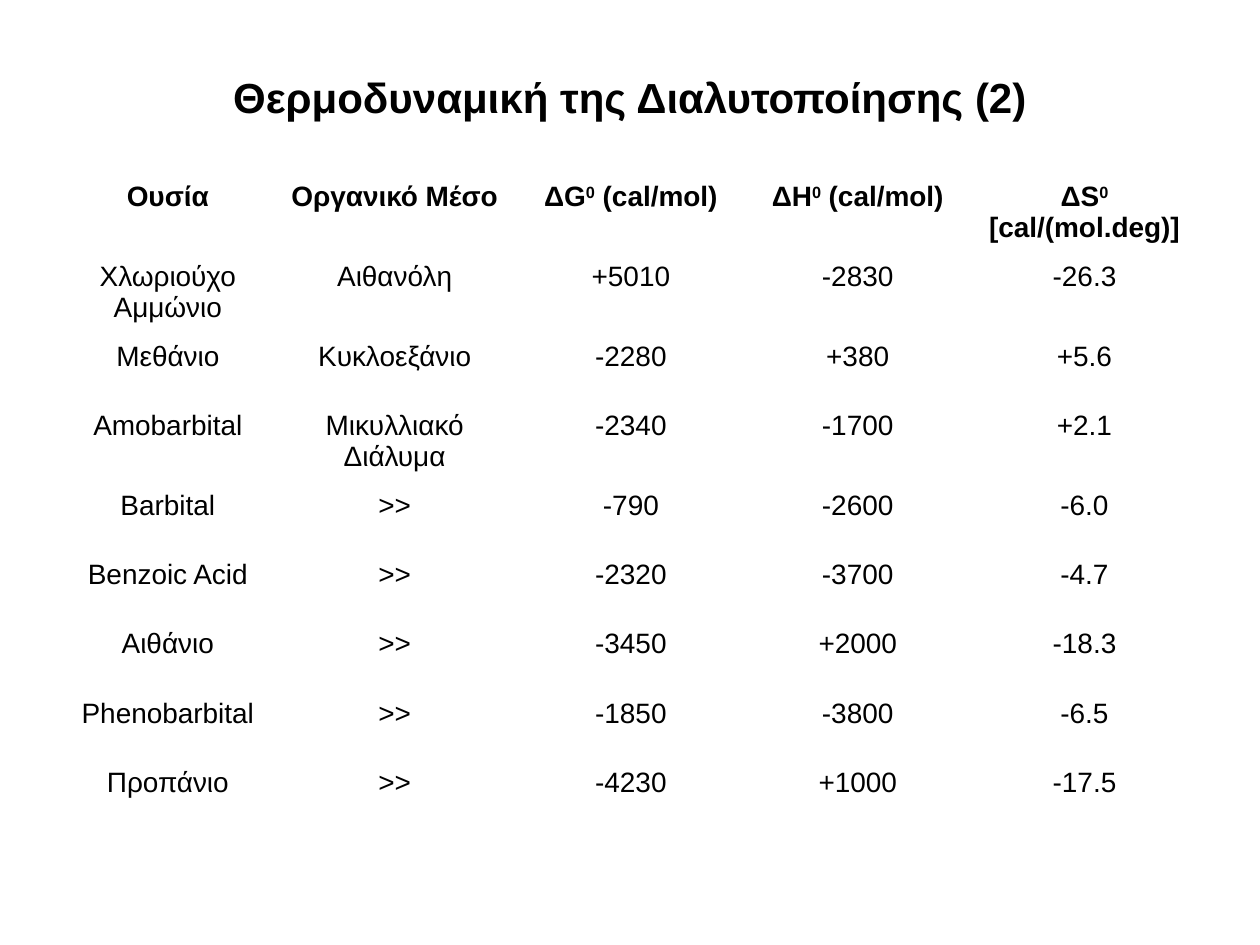
from pptx import Presentation
from pptx.dml.color import RGBColor
from pptx.enum.text import MSO_ANCHOR, PP_ALIGN
from pptx.util import Pt

BLACK = RGBColor(0, 0, 0)
FONT = "Arial"
COL_WIDTHS = [118.8, 140.4, 129.6, 129.6, 129.6]
ROW_HEIGHT = 39.6
HEADERS = [
    ["Ουσία"],
    ["Οργανικό Μέσο"],
    ["ΔG", "0", " (cal/mol)"],
    ["ΔH", "0", " (cal/mol)"],
    ["ΔS", "0", " [cal/(mol.deg)]"],
]
DATA = [
    ["Χλωριούχο Αμμώνιο", "Αιθανόλη", "+5010", "-2830", "-26.3"],
    ["Μεθάνιο", "Κυκλοεξάνιο", "-2280", "+380", "+5.6"],
    ["Amobarbital", "Μικυλλιακό Διάλυμα", "-2340", "-1700", "+2.1"],
    ["Barbital", ">>", "-790", "-2600", "-6.0"],
    ["Benzoic Acid", ">>", "-2320", "-3700", "-4.7"],
    ["Αιθάνιο", ">>", "-3450", "+2000", "-18.3"],
    ["Phenobarbital", ">>", "-1850", "-3800", "-6.5"],
    ["Προπάνιο", ">>", "-4230", "+1000", "-17.5"],
]


def style(p, size, bold):
    p.alignment = PP_ALIGN.CENTER
    p.font.name = FONT
    p.font.size = Pt(size)
    p.font.bold = bold
    p.font.color.rgb = BLACK


prs = Presentation()
prs.slide_width, prs.slide_height = Pt(720), Pt(540)
s = prs.slides.add_slide(prs.slide_layouts[6])

title = s.shapes.add_textbox(Pt(36), Pt(21.6), Pt(648), Pt(67))
tf = title.text_frame
tf.word_wrap = True
tf.vertical_anchor = MSO_ANCHOR.MIDDLE
tf.text = "Θερμοδυναμική της Διαλυτοποίησης (2)"
style(tf.paragraphs[0], 24, True)

rows = [HEADERS] + [[[text] for text in row] for row in DATA]
table = s.shapes.add_table(
    len(rows), len(COL_WIDTHS), Pt(36.5), Pt(100),
    Pt(sum(COL_WIDTHS)), Pt(ROW_HEIGHT * len(rows)),
).table
table.first_row = False
table.horz_banding = False
for column, width in zip(table.columns, COL_WIDTHS):
    column.width = Pt(width)

for i, row in enumerate(rows):
    table.rows[i].height = Pt(ROW_HEIGHT)
    for j, parts in enumerate(row):
        cell = table.cell(i, j)
        cell.fill.background()
        p = cell.text_frame.paragraphs[0]
        style(p, 16, i == 0)
        for k, text in enumerate(parts):
            r = p.add_run()
            r.text = text
            if k == 1:
                r._r.get_or_add_rPr().set("baseline", "30000")

prs.save("out.pptx")
